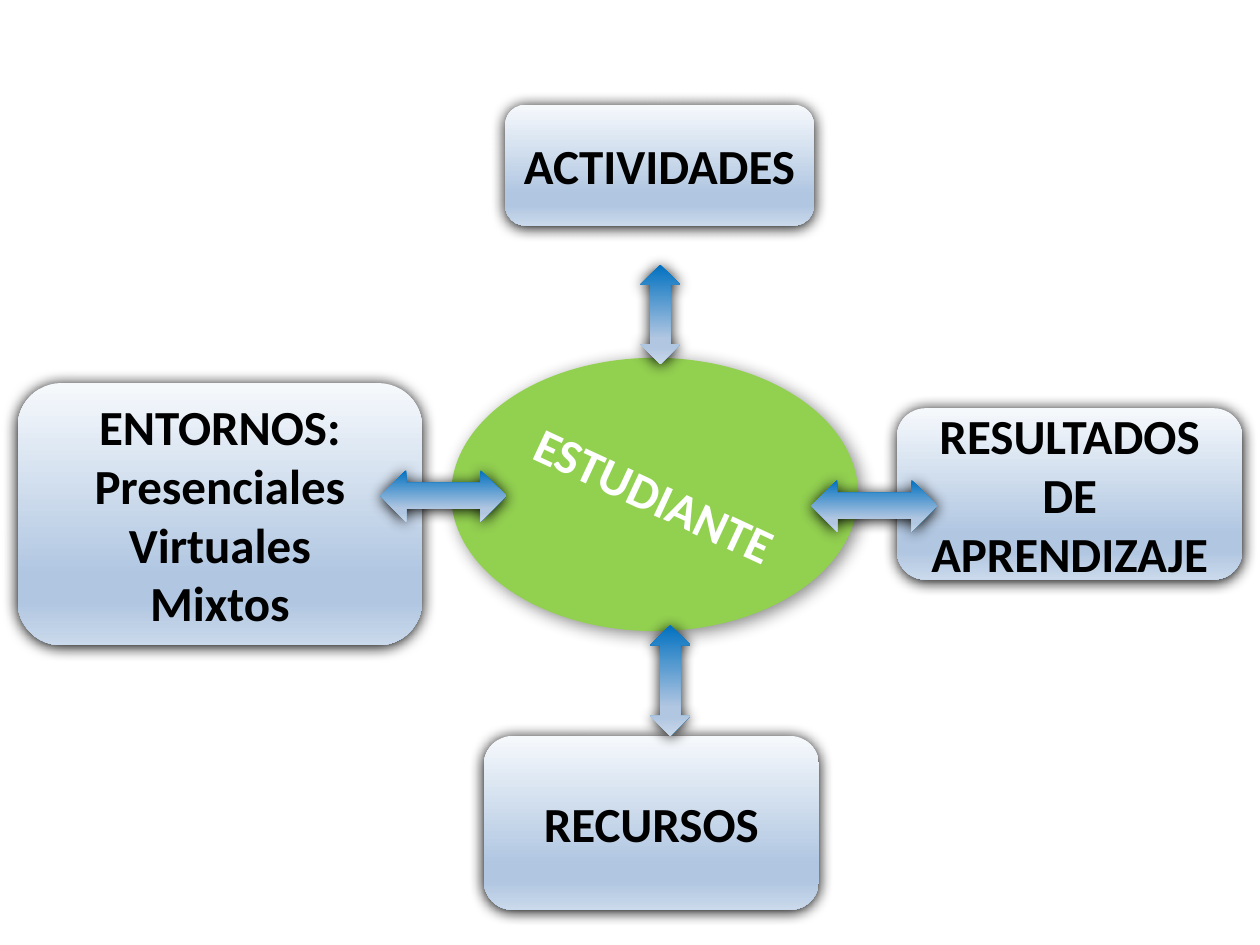
"""Build a slide with the student at the centre of four learning elements."""
import copy

import pptx
import pptx.dml.color
import pptx.enum.shapes
import pptx.enum.text
import pptx.oxml
import pptx.oxml.ns
import pptx.util

Pt = pptx.util.Pt
RGBColor = pptx.dml.color.RGBColor
SHAPES = pptx.enum.shapes.MSO_SHAPE

WHITE = RGBColor(0xFF, 0xFF, 0xFF)
BLACK = RGBColor(0x00, 0x00, 0x00)
GREEN = RGBColor(0x92, 0xD0, 0x50)
BLUE = RGBColor(0x00, 0x70, 0xC0)
PALE = RGBColor(0xF6, 0xF9, 0xFC)
STEEL = RGBColor(0xB0, 0xC6, 0xE1)
MIST = RGBColor(0xCA, 0xD9, 0xEB)


def write_text(shape, text, size=28, color=BLACK, bold=True, wrap=False):
    frame = shape.text_frame
    frame.word_wrap = wrap
    frame.vertical_anchor = pptx.enum.text.MSO_ANCHOR.MIDDLE
    frame.text = text
    for paragraph in frame.paragraphs:
        paragraph.alignment = pptx.enum.text.PP_ALIGN.CENTER
        font = paragraph.runs[0].font
        font.name = "Calibri"
        font.size = Pt(size)
        font.bold = bold
        font.color.rgb = color


def add_shadowed_shape(kind, bounds, blur=8.5, distance=1, angle=90, alpha=100):
    shape = slide.shapes.add_shape(kind, *[Pt(length) for length in bounds])
    shape.line.fill.background()
    shape.shadow.inherit = False
    effects = shape._element.spPr.find(pptx.oxml.ns.qn("a:effectLst"))
    effects.append(pptx.oxml.parse_xml(
        f'<a:outerShdw {pptx.oxml.ns.nsdecls("a")} blurRad="{int(Pt(blur))}" '
        f'dist="{int(Pt(distance))}" dir="{angle * 60000}" algn="ctr" rotWithShape="0">'
        f'<a:srgbClr val="{BLACK}"><a:alpha val="{alpha * 1000}"/></a:srgbClr>'
        '</a:outerShdw>'))
    return shape


presentation = pptx.Presentation()
presentation.slide_width = Pt(720)
presentation.slide_height = Pt(540)
slide = presentation.slides.add_slide(presentation.slide_layouts[6])

student = add_shadowed_shape(SHAPES.OVAL, (257.8, 204.5, 232.6, 156.2),
                             blur=10, distance=3, angle=45, alpha=45)
student.fill.solid()
student.fill.fore_color.rgb = GREEN
write_text(student, "ESTUDIANTE", color=WHITE)
student.text_frame._txBody.bodyPr.set("rot", str(25 * 60000))

boxes = [
    ("ACTIVIDADES", (288.7, 59.8, 176.4, 69.1)),
    ("RECURSOS", (276.5, 420.5, 191.5, 99.4)),
    ("ENTORNOS:\nPresenciales\nVirtuales\nMixtos", (10.1, 218.9, 231.1, 149.8)),
    ("RESULTADOS DE APRENDIZAJE", (512.6, 233.3, 197.3, 97.9)),
]
arrows = [
    (SHAPES.UP_DOWN_ARROW, (365.8, 151.2, 23, 56.9)),
    (SHAPES.UP_DOWN_ARROW, (371.5, 357.1, 23, 63.4)),
    (SHAPES.LEFT_RIGHT_ARROW, (463.7, 274.3, 72, 29.5)),
    (SHAPES.LEFT_RIGHT_ARROW, (217.4, 268.6, 72, 29.5)),
]
elements = [(SHAPES.ROUNDED_RECTANGLE, bounds, PALE, text) for text, bounds in boxes]
elements += [(kind, bounds, BLUE, "") for kind, bounds in arrows]

for kind, bounds, top_color, text in elements:
    shape = add_shadowed_shape(kind, bounds)
    shape.fill.gradient()
    shape.fill.gradient_angle = 270
    stop_list = shape._element.spPr.find(".//" + pptx.oxml.ns.qn("a:gsLst"))
    stop_list.extend([copy.deepcopy(stop) for stop in stop_list])
    colors = [(0, top_color), (0.74, STEEL), (0.83, STEEL), (1, MIST)]
    for stop, (position, color) in zip(shape.fill.gradient_stops, colors):
        stop.position = position
        stop.color.rgb = color
    if text:
        write_text(shape, text, wrap=" " in text)

presentation.save("out.pptx")
